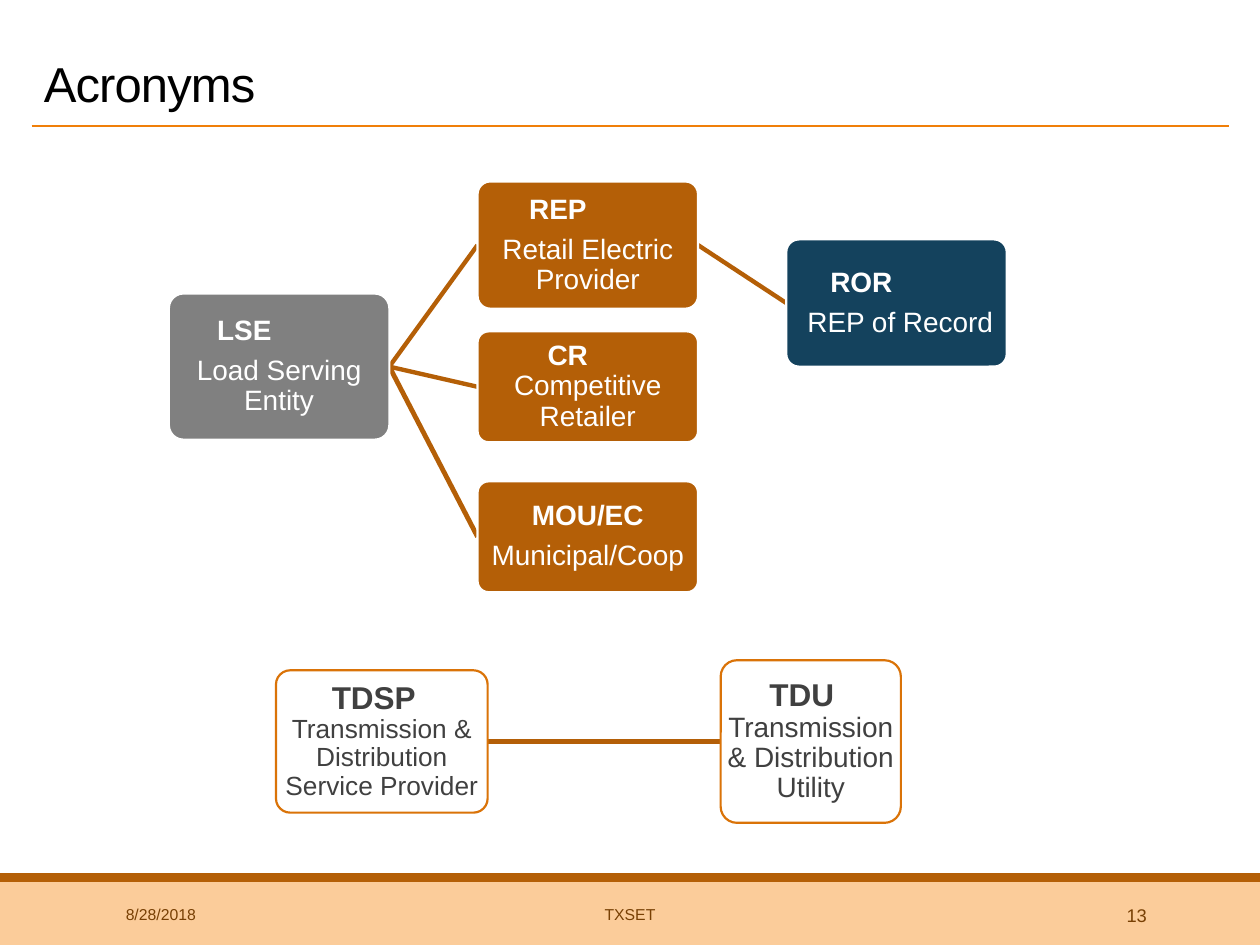
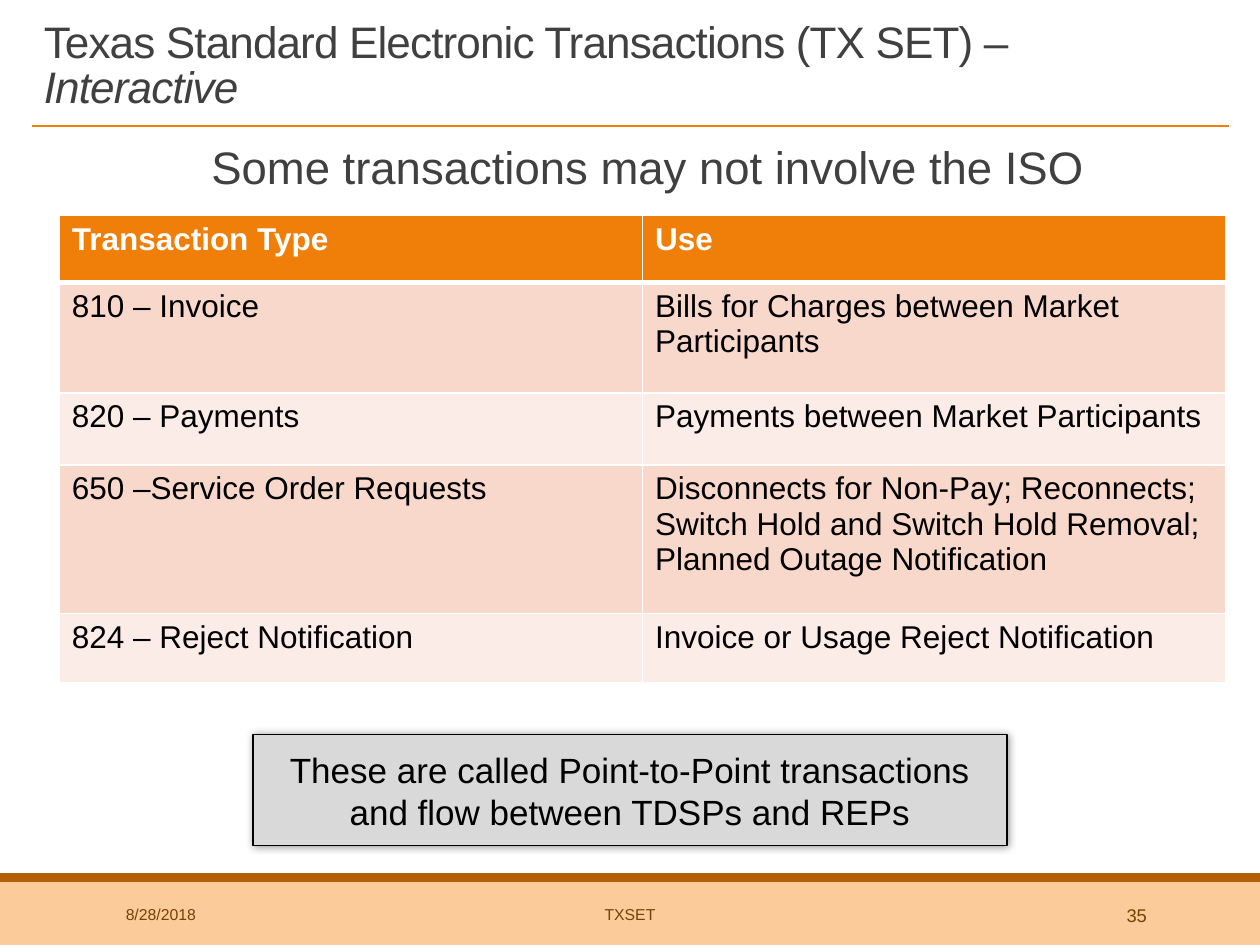
from dataclasses import dataclass

from lxml.etree import SubElement
from pptx import Presentation
from pptx.dml.color import RGBColor
from pptx.enum.shapes import MSO_CONNECTOR as Conn, MSO_SHAPE as Shape
from pptx.enum.text import MSO_ANCHOR as Anchor, PP_ALIGN as Align
from pptx.oxml.ns import qn
from pptx.util import Inches, Pt

WIDE, HIGH = 10, 7.5


@dataclass(frozen=True)
class Theme:
    font: str = "Arial"
    black: str = "000000"
    white: str = "FFFFFF"
    text: str = "404040"
    gray: str = "808080"
    pale: str = "D9D9D9"
    navy: str = "14425D"
    orange: str = "F07F09"
    rim: str = "DA7308"
    rust: str = "B45F07"
    peach: str = "FBCC9A"
    brown: str = "784004"
    bands: tuple = ("F9D8CC", "FCECE7")
    title: float = 28
    long: float = 25.2
    lead: float = 26
    note: float = 20
    head: float = 18
    body: float = 16
    small: float = 15
    page: float = 10.5
    foot: float = 9


T = Theme()

# Content
DATE, GROUP = "8/28/2018", "TXSET"
ACRONYMS = "Acronyms"
SET_TITLE = [("Texas Standard Electronic Transactions (TX SET) – ", False),
             ("Interactive", True)]
LEAD = "Some transactions may not involve the ISO"
NOTE = "These are called Point-to-Point transactions and flow between TDSPs and REPs"

FILLED = dict(line=T.white, color=T.white, sizes=(T.body, T.body))
OPEN = dict(fill=T.white, line=T.rim, color=T.text, gap=0)

# name: place, head, head indent (None centres it), body, look
NODES = {
    "LSE": ((1.34, 2.33, 1.75, 1.16), 0.34, "Load Serving Entity",
            dict(FILLED, fill=T.gray)),
    "REP": ((3.79, 1.44, 1.75, 1.01), 0.37, "Retail Electric Provider",
            dict(FILLED, fill=T.rust)),
    "ROR": ((6.24, 1.9, 1.75, 1.01), 0.31, "REP of Record",
            dict(FILLED, fill=T.navy, shift=0.06)),
    "CR": ((3.79, 2.63, 1.75, 0.88), 0.52, "Competitive Retailer",
           dict(FILLED, fill=T.rust, gap=0)),
    "MOU/EC": ((3.79, 3.82, 1.75, 0.88), None, "Municipal/Coop",
               dict(FILLED, fill=T.rust)),
    "TDSP": ((2.19, 5.32, 1.68, 1.13), 0.4,
             "Transmission & Distribution Service Provider",
             dict(OPEN, sizes=(T.head, T.small))),
    "TDU": ((5.72, 5.24, 1.43, 1.29), 0.34,
            "Transmission & Distribution Utility",
            dict(OPEN, sizes=(T.head, T.body))),
}
LINKS = [("LSE", "REP", 2.5), ("REP", "ROR", 2.5), ("LSE", "CR", 2.5),
         ("LSE", "MOU/EC", 2.75), ("TDSP", "TDU", 2.5)]

ROWS = [
    (0.53, "Transaction Type", "Use"),
    (0.88, "810 – Invoice", "Bills for Charges between Market Participants"),
    (0.57, "820 – Payments", "Payments between Market Participants"),
    (1.18, "650 –Service Order Requests",
     "Disconnects for Non-Pay; Reconnects; Switch Hold and Switch Hold "
     "Removal; Planned Outage Notification"),
    (0.55, "824 – Reject Notification", "Invoice or Usage Reject Notification"),
]
COL = 4.63


def rgb(code):
    return RGBColor.from_string(code)


def box(at):
    return [Inches(n) for n in at]


def style(par, size, color, align=Align.LEFT, bold=False, indent=0, line=None):
    if indent:
        par._p.get_or_add_pPr().set("marL", str(Inches(indent)))
    par.alignment = align
    if line:
        par.line_spacing = line
    font = par.font
    font.name, font.size, font.bold = T.font, Pt(size), bold
    font.color.rgb = rgb(color)


def inset(frame, side, top):
    frame.margin_left = frame.margin_right = Inches(side)
    frame.margin_top = frame.margin_bottom = Inches(top)


def label(slide, at, text, size, color, anchor=Anchor.MIDDLE, side=0.1, **look):
    """Add a wrapped text box; text is a string or (text, italic) runs."""
    frame = slide.shapes.add_textbox(*box(at)).text_frame
    frame.word_wrap, frame.vertical_anchor = True, anchor
    inset(frame, side, 0.05)
    par = frame.paragraphs[0]
    for words, slant in [(text, False)] if isinstance(text, str) else text:
        run = par.add_run()
        run.text = words
        if slant:
            run.font.italic = True
    style(par, size, color, **look)
    return par


def block(slide, kind, at, fill, line=None, weight=1):
    shape = slide.shapes.add_shape(kind, *box(at))
    shape.shadow.inherit = False
    shape.fill.solid()
    shape.fill.fore_color.rgb = rgb(fill)
    if line:
        shape.line.color.rgb = rgb(line)
        shape.line.width = Pt(weight)
    else:
        shape.line.fill.background()
    return shape


def rule(slide, start, end, color, weight):
    line = slide.shapes.add_connector(Conn.STRAIGHT, *box(start + end))
    line.line.color.rgb = rgb(color)
    line.line.width = Pt(weight)
    SubElement(line._element.spPr, qn("a:effectLst"))


def start(deck, title, size, color, width, page):
    """Add a slide with its title, rule, bands and footer."""
    slide = deck.slides.add_slide(deck.slide_layouts[6])
    block(slide, Shape.RECTANGLE, (0, 7, WIDE, 0.5), T.peach)
    block(slide, Shape.RECTANGLE, (0, 6.93, WIDE, 0.07), T.rust)
    rule(slide, (0.25, 1), (WIDE - 0.25, 1), T.orange, 1)
    par = label(slide, (0.25, 0.25, width, 0.69), title, size, color,
                Anchor.BOTTOM, line=0.85)
    par.font._element.set("spc", "-50")
    for left, span, text, points, align in (
            (0.9, 2.03, DATE, T.foot, Align.LEFT),
            (3.02, 3.96, GROUP, T.foot, Align.CENTER),
            (8.12, 1.08, str(page), T.page, Align.RIGHT)):
        label(slide, (left, 7.06, span, 0.4), text, points, T.brown, align=align)
    return slide


def node(slide, at, head, indent, body, fill, line, color, sizes, gap=5.6, shift=0):
    shape = block(slide, Shape.ROUNDED_RECTANGLE, at, fill, line, 1.25)
    shape.adjustments[0] = 0.1
    frame = shape.text_frame
    frame.word_wrap, frame.vertical_anchor = True, Anchor.MIDDLE
    inset(frame, 0.01, 0.01)
    top, low = frame.paragraphs[0], frame.add_paragraph()
    top.text, low.text = head, body
    style(top, sizes[0], color, Align.LEFT if indent else Align.CENTER,
          True, indent, 0.9)
    style(low, sizes[1], color, Align.CENTER, False, shift, 0.9)
    low.space_before = Pt(gap)


def link(slide, source, target, weight):
    """Join the right side of one node to the left side of another."""
    left, top, width, height = NODES[source][0]
    x, y, _, tall = NODES[target][0]
    rule(slide, (left + width, top + height / 2), (x, y + tall / 2), T.rust, weight)


def edge(cell, sides):
    """Draw white borders; sides maps a border tag to its points."""
    props = cell._tc.get_or_add_tcPr()
    for spot, (tag, points) in enumerate(sides.items()):
        line = SubElement(props, qn("a:" + tag), w=str(Pt(points)))
        fill = SubElement(line, qn("a:solidFill"))
        SubElement(fill, qn("a:srgbClr"), val=T.white)
        props.insert(spot, line)


def grid(slide, left, top):
    high = sum(row[0] for row in ROWS)
    table = slide.shapes.add_table(
        len(ROWS), 2, *box((left, top, 2 * COL, high))).table
    for col in table.columns:
        col.width = Inches(COL)
    for r, (tall, *texts) in enumerate(ROWS):
        table.rows[r].height = Inches(tall)
        for c, text in enumerate(texts):
            cell = table.cell(r, c)
            cell.text = text
            style(cell.text_frame.paragraphs[0], T.head,
                  T.black if r else T.white, bold=r == 0)
            cell.fill.solid()
            cell.fill.fore_color.rgb = rgb(T.bands[(r - 1) % 2] if r else T.orange)
            edge(cell, {"lnL": 1, "lnR": 1, "lnT": 3 if r == 1 else 1,
                        "lnB": 1 if r else 3})


def glow(shape):
    """Give the shape a soft, centred shadow."""
    effects = shape._element.spPr.find(qn("a:effectLst"))
    shade = SubElement(effects, qn("a:outerShdw"), blurRad=str(Pt(5)),
                       dist="0", dir="0", algn="ctr", rotWithShape="0")
    color = SubElement(shade, qn("a:srgbClr"), val=T.black)
    SubElement(color, qn("a:alpha"), val="40000")


def terms(deck):
    slide = start(deck, ACRONYMS, T.title, T.black, 8.25, 13)
    for ends in LINKS:
        link(slide, *ends)
    for name, (at, indent, body, look) in NODES.items():
        node(slide, at, name, indent, body, **look)


def direct(deck):
    slide = start(deck, SET_TITLE, T.long, T.text, 9.47, 35)
    label(slide, (0.36, 1.1, 9.47, 0.5), LEAD, T.lead, T.text, Anchor.TOP,
          side=0, align=Align.CENTER, indent=0.1, line=0.9)
    grid(slide, 0.47, 1.71)
    note = block(slide, Shape.RECTANGLE, (2.01, 5.83, 5.98, 0.88), T.pale, T.black)
    glow(note)
    frame = note.text_frame
    frame.word_wrap = True
    inset(frame, 0.1, 0.1)
    frame.text = NOTE
    style(frame.paragraphs[0], T.note, T.black, Align.CENTER)


def main():
    deck = Presentation()
    deck.slide_width, deck.slide_height = Inches(WIDE), Inches(HIGH)
    terms(deck)
    direct(deck)
    deck.save("out.pptx")


if __name__ == "__main__":
    main()
